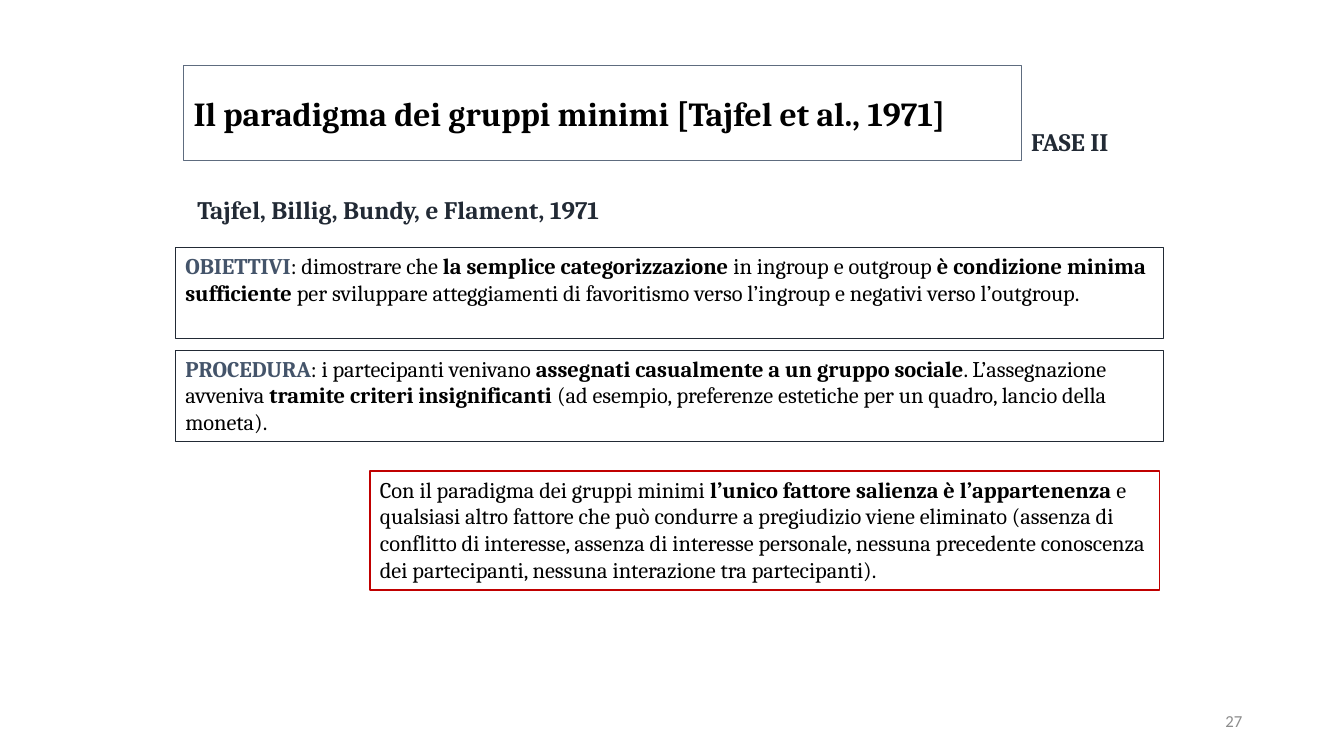
"""Build the slide on the minimal group paradigm."""
from dataclasses import dataclass
from typing import Any, Optional

from pptx import Presentation
from pptx.dml.color import RGBColor
from pptx.enum import shapes, text
from pptx.util import Inches, Pt

COLORS = {"black": "000000", "navy": "222A35", "slate": "44546A",
          "title_line": "5E6C7F", "red": "C00000", "gray": "8C8C8C"}


@dataclass
class Run:
    """A stretch of text with its weight and colour."""
    words: str
    bold: bool = False
    color: str = "black"


@dataclass
class Box:
    """A text area with an optional outline."""
    left: float
    top: float
    width: float
    height: float
    runs: list[Run]
    size: int = 16
    line: Optional[str] = None
    line_width: float = 0.25
    font: str = "Cambria"
    align: text.PP_ALIGN = text.PP_ALIGN.LEFT
    anchor: text.MSO_ANCHOR = text.MSO_ANCHOR.TOP


TITLE = Box(1.82, 0.65, 8.31, 0.94,
            [Run("Il paradigma dei gruppi minimi [Tajfel et al., 1971]", True)],
            size=24, line="title_line", line_width=1, anchor=text.MSO_ANCHOR.MIDDLE)

BOXES = [
    Box(9.42, 6.95, 3, 0.4, [Run("27", color="gray")], size=12, font="Calibri",
        align=text.PP_ALIGN.RIGHT, anchor=text.MSO_ANCHOR.MIDDLE),
    Box(1.86, 1.88, 9.64, 0.4,
        [Run("Tajfel, Billig, Bundy, e Flament, 1971", True, "navy")], size=18),
    Box(1.74, 2.45, 9.8, 0.91, [
        Run("OBIETTIVI", True, "slate"),
        Run(": dimostrare che "),
        Run("la semplice categorizzazione ", True),
        Run("in ingroup e outgroup "),
        Run("è condizione minima sufficiente", True),
        Run(" per sviluppare atteggiamenti di favoritismo verso l’ingroup "
            "e negativi verso l’outgroup."),
    ], line="navy"),
    Box(1.74, 3.47, 9.8, 0.91, [
        Run("PROCEDURA", True, "slate"),
        Run(": i partecipanti venivano "),
        Run("assegnati casualmente a un gruppo sociale", True),
        Run(". L’assegnazione avveniva "),
        Run("tramite criteri insignificanti ", True),
        Run("(ad esempio, preferenze estetiche per un quadro, lancio della moneta)."),
    ], line="navy"),
    Box(3.67, 4.67, 7.83, 1.18, [
        Run("Con il paradigma dei gruppi minimi "),
        Run("l’unico fattore salienza è l’appartenenza ", True),
        Run("e qualsiasi altro fattore che può condurre a pregiudizio viene eliminato "
            "(assenza di conflitto di interesse, assenza di interesse personale, "
            "nessuna precedente conoscenza dei partecipanti, "
            "nessuna interazione tra partecipanti)."),
    ], line="red", line_width=1.25),
    Box(10.13, 1.2, 1.1, 0.4, [Run("FASE II", True, "navy")], size=18),
]


def rgb(name: str) -> RGBColor:
    """Look up a palette colour."""
    return RGBColor.from_string(COLORS[name])


def format_box(sp: Any, box: Box) -> None:
    """Place a shape, outline it and write its runs."""
    sp.left, sp.top = Inches(box.left), Inches(box.top)
    sp.width, sp.height = Inches(box.width), Inches(box.height)
    if box.line:
        sp.line.color.rgb = rgb(box.line)
        sp.line.width = Pt(box.line_width)
    tf = sp.text_frame
    tf.word_wrap = True
    tf.auto_size = text.MSO_AUTO_SIZE.NONE
    tf.vertical_anchor = box.anchor
    p = tf.paragraphs[0]
    p.alignment = box.align
    for run in box.runs:
        r = p.add_run()
        r.text = run.words
        r.font.name = box.font
        r.font.size = Pt(box.size)
        r.font.bold = run.bold
        r.font.color.rgb = rgb(run.color)


def add_box(slide: Any, box: Box) -> None:
    """Add an outlined rectangle or a plain text box."""
    area = [Inches(v) for v in (box.left, box.top, box.width, box.height)]
    if box.line:
        sp = slide.shapes.add_shape(shapes.MSO_SHAPE.RECTANGLE, *area)
        sp.shadow.inherit = False
        sp.fill.background()
    else:
        sp = slide.shapes.add_textbox(*area)
    format_box(sp, box)


def main() -> None:
    """Build and save the presentation."""
    prs = Presentation()
    prs.slide_width, prs.slide_height = Inches(13.33), Inches(7.5)
    slide = prs.slides.add_slide(prs.slide_layouts[5])
    format_box(slide.shapes.title, TITLE)
    for box in BOXES:
        add_box(slide, box)
    prs.save("out.pptx")


if __name__ == "__main__":
    main()
